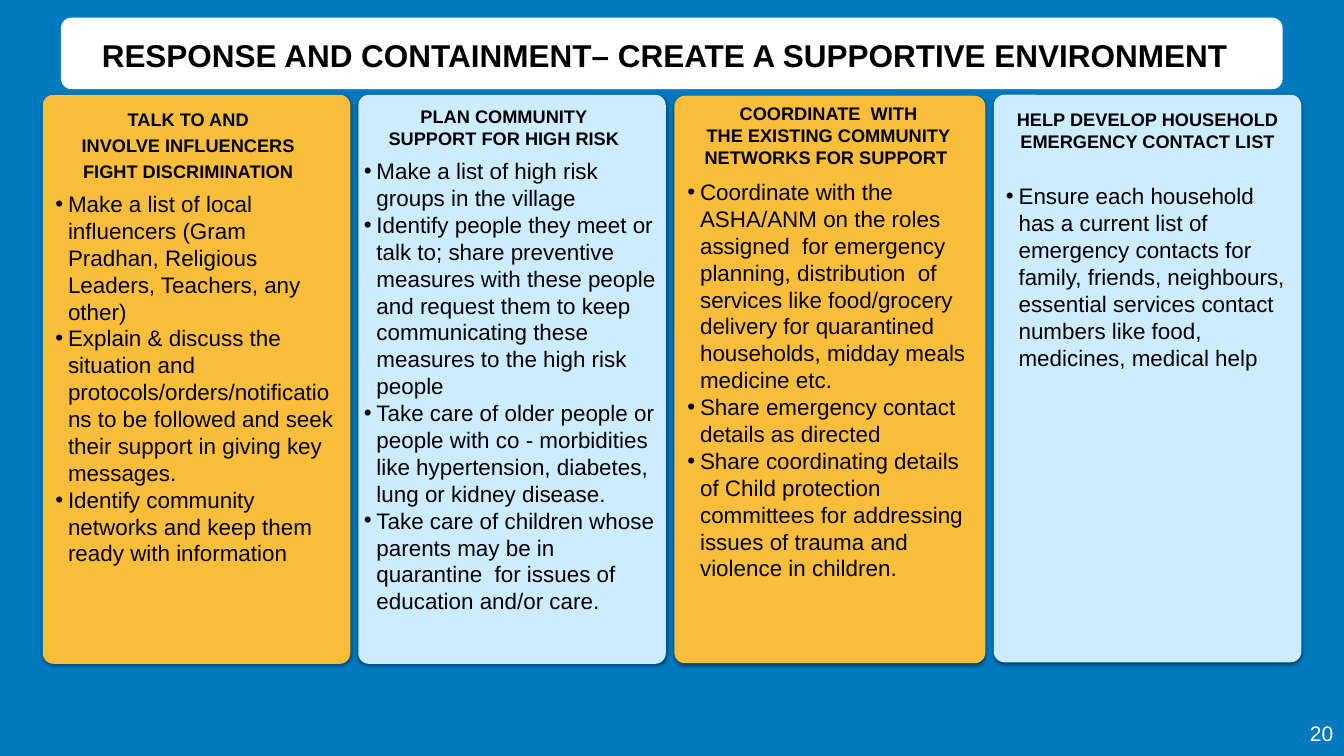
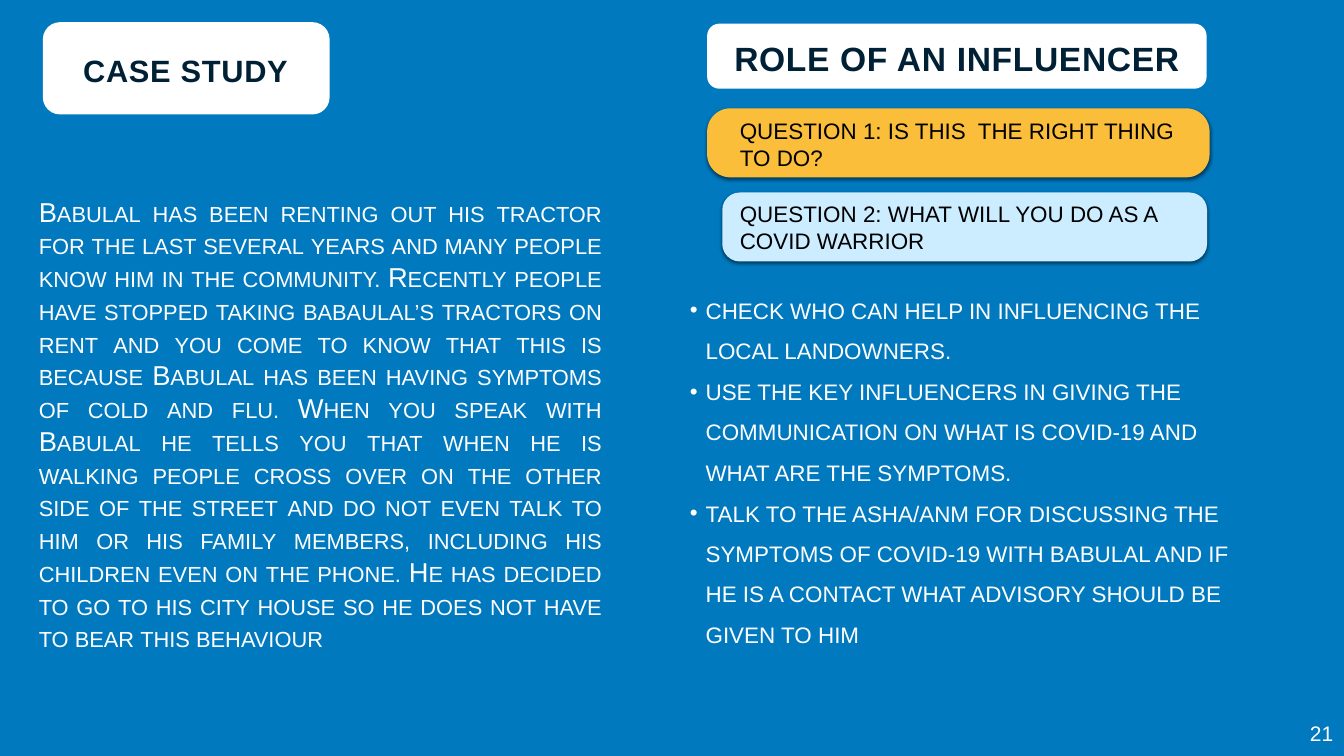
from itertools import cycle

from lxml.etree import SubElement
from pptx import Presentation
from pptx.dml.color import RGBColor
from pptx.enum.shapes import MSO_SHAPE
from pptx.enum.text import MSO_ANCHOR, MSO_AUTO_SIZE, PP_ALIGN
from pptx.oxml.ns import qn
from pptx.util import Pt

BLUE, WHITE, BLACK = "0079BF", "FFFFFF", "000000"
AMBER, PALE, NAVY = "FABE3B", "CCECFF", "002135"
FONT = "Arial"
MARGIN = 4.3
TIGHT = 1.4

# card frame, heading frame, heading options, list frame, list margin, heading lines, bullets
CARDS = [
    ((61.2, 135.4, 439.2, 812.9), (112.3, 153.4, 313.2, 112.3),
     dict(wrap=False, margin=TIGHT, line=0.9, before=9), (77.8, 280.1, 406.1, 520.6), TIGHT,
     ["TALK TO AND", "INVOLVE INFLUENCERS", "FIGHT DISCRIMINATION"],
     ["Make a list of local influencers (Gram Pradhan, Religious Leaders, Teachers, any other)",
      "Explain & discuss the situation and protocols/orders/notifications to be followed "
      "and seek their support in giving key messages.",
      "Identify community networks and keep them ready with information"]),
    ((511.9, 135.4, 439.2, 812.9), (550.8, 146.9, 338.4, 69.1),
     dict(wrap=False, margin=TIGHT), (518.4, 235.4, 427, 631.4), TIGHT,
     ["PLAN COMMUNITY", "SUPPORT FOR HIGH RISK"],
     ["Make a list of high risk groups in the village",
      "Identify people they meet or talk to; share preventive measures with these people "
      "and request them to keep communicating these measures to the high risk people",
      "Take care of older people or people with co - morbidities like hypertension, "
      "diabetes, lung or kidney disease.",
      "Take care of children whose parents may be in quarantine  for issues of education "
      "and/or care."]),
    ((963.4, 136.8, 444.2, 810.7), (964.1, 143.3, 439.2, 100.1),
     {}, (977.8, 280.1, 427, 524.9), MARGIN,
     ["COORDINATE  WITH", "THE EXISTING COMMUNITY", "NETWORKS FOR SUPPORT "],
     ["Coordinate with the ASHA/ANM on the roles assigned  for emergency planning, "
      "distribution  of services like food/grocery delivery for quarantined households, "
      "midday meals medicine etc.",
      "Share emergency contact details as directed",
      "Share coordinating details of Child protection committees for addressing issues of "
      "trauma and violence in children."]),
    ((1419.8, 135.4, 439.2, 810.7), (1431.4, 151.9, 416.2, 69.1),
     {}, (1432.8, 262.1, 416.2, 265.7), MARGIN,
     ["HELP DEVELOP HOUSEHOLD", "EMERGENCY CONTACT LIST"],
     ["Ensure each household has a current list of emergency contacts for family, friends, "
      "neighbours, essential services contact numbers like food, medicines, medical help"]),
]

CASE = (
    "Babulal has been renting out his tractor for the last several years and many people know "
    "him in the community. Recently people have stopped taking babaulal’s tractors on rent and "
    "you come to know that this is because Babulal has been having symptoms of cold and flu. "
    "When you speak with Babulal he tells you that when he is walking people cross over on the "
    "other side of the street and do not even talk to him or his family members, including his "
    "children even on the phone. He has decided to go to his city house so he does not have to "
    "bear this behaviour ")

ACTIONS = [
    "CHECK WHO CAN HELP IN INFLUENCING THE LOCAL LANDOWNERS.",
    "USE THE KEY INFLUENCERS IN GIVING THE COMMUNICATION ON WHAT IS COVID-19 AND WHAT ARE "
    "THE SYMPTOMS.",
    "TALK TO THE ASHA/ANM FOR DISCUSSING THE SYMPTOMS OF COVID-19 WITH BABULAL AND IF HE IS A "
    "CONTACT WHAT ADVISORY SHOULD BE GIVEN TO HIM",
]


def rgb(color):
    return RGBColor.from_string(color)


def points(frame):
    return [Pt(v) for v in frame]


def add_shadow(sp):
    """Give the shape a soft half-transparent shadow straight below it."""
    effects = sp._element.spPr.find(qn("a:effectLst"))
    shadow = SubElement(effects, qn("a:outerShdw"), blurRad=str(Pt(5)), dist=str(Pt(2)),
                        dir="5400000", algn="t", rotWithShape="0")
    color = SubElement(shadow, qn("a:srgbClr"), val=BLACK)
    SubElement(color, qn("a:alpha"), val="50000")


def add_panel(s, frame, color, radius, shadow=True):
    sp = s.shapes.add_shape(MSO_SHAPE.ROUNDED_RECTANGLE, *points(frame))
    sp.adjustments[0] = radius
    sp.fill.solid()
    sp.fill.fore_color.rgb = rgb(color)
    sp.line.fill.background()
    sp.shadow.inherit = False
    if shadow:
        add_shadow(sp)


def add_text(s, frame, lines, size, color=BLACK, bold=False, align=PP_ALIGN.LEFT,
             anchor=MSO_ANCHOR.MIDDLE, margin=MARGIN, wrap=True, line=None, before=0):
    tf = s.shapes.add_textbox(*points(frame)).text_frame
    tf.word_wrap = wrap
    tf.auto_size = MSO_AUTO_SIZE.SHAPE_TO_FIT_TEXT
    tf.vertical_anchor = anchor
    tf.margin_left = tf.margin_right = tf.margin_top = tf.margin_bottom = Pt(margin)
    for i, text in enumerate(lines):
        p = tf.add_paragraph() if i else tf.paragraphs[0]
        r = p.add_run()
        r.text = text
        p.alignment = align
        p.space_before = Pt(before)
        if line:
            p.line_spacing = line
        for font in (p.font, r.font):
            font.name, font.size, font.bold = FONT, Pt(size), bold
            font.color.rgb = rgb(color)
    return tf


def set_run_property(tf, name, value):
    for p in tf.paragraphs:
        for r in p.runs:
            r.font._element.set(name, value)


def add_bullets(s, frame, lines, indent, **style):
    tf = add_text(s, frame, lines, 32, **style)
    for p in tf.paragraphs:
        pPr = p._p.get_or_add_pPr()
        pPr.set("marL", str(Pt(indent)))
        pPr.set("indent", str(-Pt(indent)))
        for tag, attributes in (("a:buFont", {"typeface": FONT}), ("a:buChar", {"char": "•"})):
            bullet = pPr.makeelement(qn(tag), attributes)
            pPr.insert_element_before(bullet, "a:tabLst", "a:defRPr", "a:extLst")


def add_title(s, panel, frame, text, size):
    """Navy, slightly spaced title on a white panel."""
    add_panel(s, panel, WHITE, 0.186, shadow=False)
    tf = add_text(s, frame, [text], size, NAVY, bold=True, anchor=MSO_ANCHOR.TOP, wrap=False)
    set_run_property(tf, "spc", "100")


def add_question(s, panel, color, radius, frame, text):
    add_panel(s, panel, color, radius)
    add_text(s, frame, [text], 32, anchor=MSO_ANCHOR.TOP)


def add_slide(prs, number):
    s = prs.slides.add_slide(prs.slide_layouts[6])
    s.background.fill.solid()
    s.background.fill.fore_color.rgb = rgb(BLUE)
    add_text(s, (1867, 1024.6, 41.8, 44.6), [str(number)], 30, WHITE,
             align=PP_ALIGN.CENTER, margin=TIGHT, wrap=False)
    return s


def build_response(prs):
    s = add_slide(prs, 20)
    for color, (card, head, head_style, body, margin, heading, bullets) in zip(
            cycle([AMBER, PALE]), CARDS):
        add_panel(s, card, color, 0.034)
        add_text(s, head, heading, 26, bold=True, align=PP_ALIGN.CENTER, **head_style)
        add_bullets(s, body, bullets, 18, margin=margin)
    add_panel(s, (87.1, 25.2, 1745.3, 102.2), WHITE, 0.147, shadow=False)
    add_text(s, (141.8, 47.5, 1636.6, 57.6),
             ["RESPONSE AND CONTAINMENT– CREATE A SUPPORTIVE ENVIRONMENT "], 45, bold=True,
             align=PP_ALIGN.JUSTIFY, anchor=MSO_ANCHOR.TOP, margin=3.6)


def build_case_study(prs):
    s = add_slide(prs, 21)
    add_title(s, (61.2, 31.7, 409.7, 131.8), (114.5, 69.1, 302.4, 56.9), "CASE STUDY", 44)
    story = add_text(s, (51.1, 294.5, 812.9, 622.8), [CASE], 39, WHITE,
                     align=PP_ALIGN.JUSTIFY, before=12)
    set_run_property(story, "cap", "small")
    add_title(s, (1010.2, 33.8, 713.5, 92.9), (1044.7, 49.7, 645.8, 61.2),
              "ROLE OF AN INFLUENCER", 48)
    add_question(s, (1010.2, 154.8, 717.8, 98.6), AMBER, 0.336, (1052.6, 163.4, 652.3, 80.6),
                 "QUESTION 1: IS THIS  THE RIGHT THING TO DO?")
    add_question(s, (1031.8, 275, 692.6, 98.6), PALE, 0.255, (1052.6, 281.5, 650.9, 80.6),
                 "QUESTION 2: WHAT WILL YOU DO AS A COVID WARRIOR")
    add_bullets(s, (981.4, 421.9, 794.2, 486), ACTIONS, 22.3, color=WHITE, line=1.5, before=1)


def main():
    prs = Presentation()
    prs.slide_width, prs.slide_height = Pt(1920), Pt(1080)
    build_response(prs)
    build_case_study(prs)
    prs.save("out.pptx")


if __name__ == "__main__":
    main()
